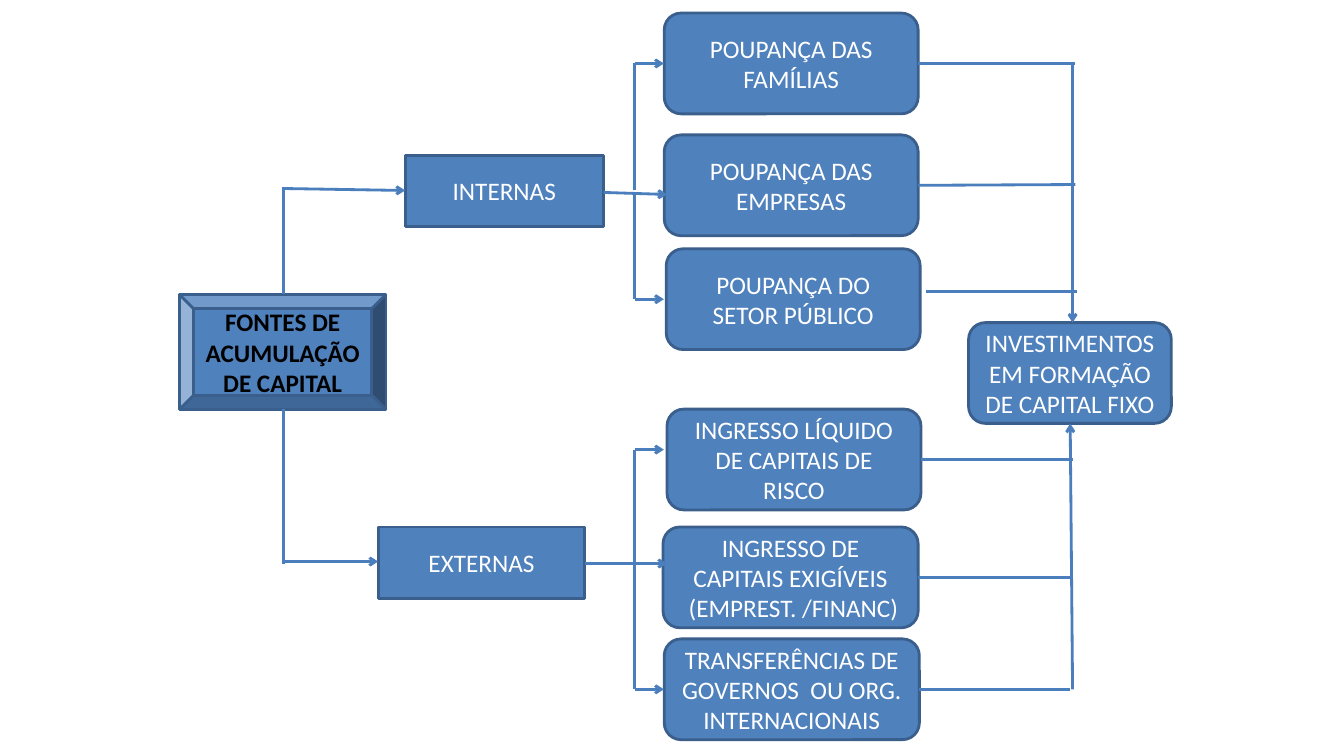
"""Build a flow slide showing the sources of capital accumulation."""
from dataclasses import dataclass

from lxml import etree
from pptx import Presentation
from pptx.dml.color import RGBColor
from pptx.enum.shapes import MSO_CONNECTOR, MSO_SHAPE
from pptx.enum.text import MSO_ANCHOR, PP_ALIGN
from pptx.oxml.ns import qn
from pptx.slide import Slide
from pptx.util import Cm, Pt

BEVEL = MSO_SHAPE.BEVEL
RECTANGLE = MSO_SHAPE.RECTANGLE
ROUNDED = MSO_SHAPE.ROUNDED_RECTANGLE
STRAIGHT = MSO_CONNECTOR.STRAIGHT
MIDDLE = MSO_ANCHOR.MIDDLE
CENTER = PP_ALIGN.CENTER

COLORS = {
    "fill": "4F81BD",
    "border": "3A5F8C",
    "link": "4B7EBC",
    "light": "FFFFFF",
    "dark": "000000",
}
FONT = "Calibri"
FONT_SIZE = Pt(18)
LINE_WIDTH = Pt(2)

ROOT_X = 7.14
BRANCH_X = 16
MERGE_X = 27.03


@dataclass(frozen=True)
class Box:
    """A labelled box, measured in centimetres."""
    text: str
    left: float
    top: float
    width: float = 6.4
    height: float = 2.54
    shape: MSO_SHAPE = ROUNDED
    color: str = "light"
    bold: bool = False


@dataclass(frozen=True)
class Link:
    """A straight line, measured in centimetres."""
    x1: float
    y1: float
    x2: float
    y2: float
    arrow: bool = False


BOXES = [
    Box("FONTES DE ACUMULAÇÃO DE CAPITAL", 4.52, 7.42, 5.21, 2.9, BEVEL, "dark", True),
    Box("INTERNAS", 10.21, 3.91, 5, 1.8, RECTANGLE),
    Box("EXTERNAS", 9.53, 13.28, 5.21, 1.8, RECTANGLE),
    Box("POUPANÇA DAS FAMÍLIAS", 16.74, 0.33),
    Box("POUPANÇA DAS EMPRESAS", 16.74, 3.4),
    Box("POUPANÇA DO SETOR PÚBLICO", 16.79, 6.27),
    Box("INGRESSO LÍQUIDO DE CAPITAIS DE RISCO", 16.81, 10.31),
    Box("INGRESSO DE CAPITAIS EXIGÍVEIS\n (EMPREST. /FINANC)", 16.71, 13.28, 6.43),
    Box("TRANSFERÊNCIAS DE GOVERNOS  OU ORG. INTERNACIONAIS", 16.74, 16.1, 6.43),
    Box("INVESTIMENTOS EM FORMAÇÃO DE CAPITAL FIXO", 24.41, 8.13, 5.11),
]

ROOT_LINKS = [
    Link(ROOT_X, 7.42, ROOT_X, 4.72),
    Link(ROOT_X, 4.75, 10.21, 4.8, True),
    Link(ROOT_X, 10.31, ROOT_X, 14.2),
    Link(ROOT_X, 14.15, 9.53, 14.15, True),
]
BRANCH_LINKS = [
    Link(15.21, 4.85, 16.81, 4.9, True),
    Link(BRANCH_X, 4.8, BRANCH_X, 1.6),
    Link(BRANCH_X, 4.9, BRANCH_X, 7.54),
    Link(14.73, 14.2, 16.81, 14.2, True),
    Link(BRANCH_X, 11.33, BRANCH_X, 17.37),
] + [Link(BRANCH_X, y, 16.73, y, True) for y in (1.6, 7.54, 11.33, 17.37)]
MERGE_LINKS = [
    Link(23.14, 1.6, 27.1, 1.6),
    Link(23.14, 4.67, 27.1, 4.65),
    Link(23.34, 7.34, 27.15, 7.34),
    Link(MERGE_X, 1.6, MERGE_X, 8.13, True),
    Link(23.22, 11.58, MERGE_X, 11.58),
    Link(23.14, 14.55, MERGE_X, 14.55),
    Link(23.16, 17.37, 26.97, 17.37),
    Link(MERGE_X, 17.37, 26.97, 10.67, True),
]


def rgb(name: str) -> RGBColor:
    """Return the named colour."""
    return RGBColor.from_string(COLORS[name])


def draw_box(page: Slide, box: Box) -> None:
    """Draw a box with its centred label."""
    shape = page.shapes.add_shape(
        box.shape, Cm(box.left), Cm(box.top), Cm(box.width), Cm(box.height)
    )
    shape.shadow.inherit = False
    shape.fill.solid()
    shape.fill.fore_color.rgb = rgb("fill")
    shape.line.color.rgb = rgb("border")
    shape.line.width = LINE_WIDTH
    frame = shape.text_frame
    frame.word_wrap = True
    frame.vertical_anchor = MIDDLE
    frame.text = box.text
    for para in frame.paragraphs:
        para.alignment = CENTER
        for span in para.runs:
            span.font.name = FONT
            span.font.size = FONT_SIZE
            span.font.bold = box.bold
            span.font.color.rgb = rgb(box.color)


def draw_link(page: Slide, link: Link) -> None:
    """Draw a line, with an arrowhead at its end where needed."""
    connector = page.shapes.add_connector(
        STRAIGHT, Cm(link.x1), Cm(link.y1), Cm(link.x2), Cm(link.y2)
    )
    connector.line.color.rgb = rgb("link")
    connector.line.width = LINE_WIDTH
    properties = connector._element.spPr
    if link.arrow:
        outline = properties.find(qn("a:ln"))
        etree.SubElement(outline, qn("a:tailEnd"), type="arrow")
    etree.SubElement(properties, qn("a:effectLst"))


def main() -> None:
    """Build and save the deck."""
    deck = Presentation()
    deck.slide_width, deck.slide_height = Cm(33.87), Cm(19.05)
    page = deck.slides.add_slide(deck.slide_layouts[6])
    for box in BOXES:
        draw_box(page, box)
    for link in ROOT_LINKS + BRANCH_LINKS + MERGE_LINKS:
        draw_link(page, link)
    deck.save("out.pptx")


if __name__ == "__main__":
    main()
